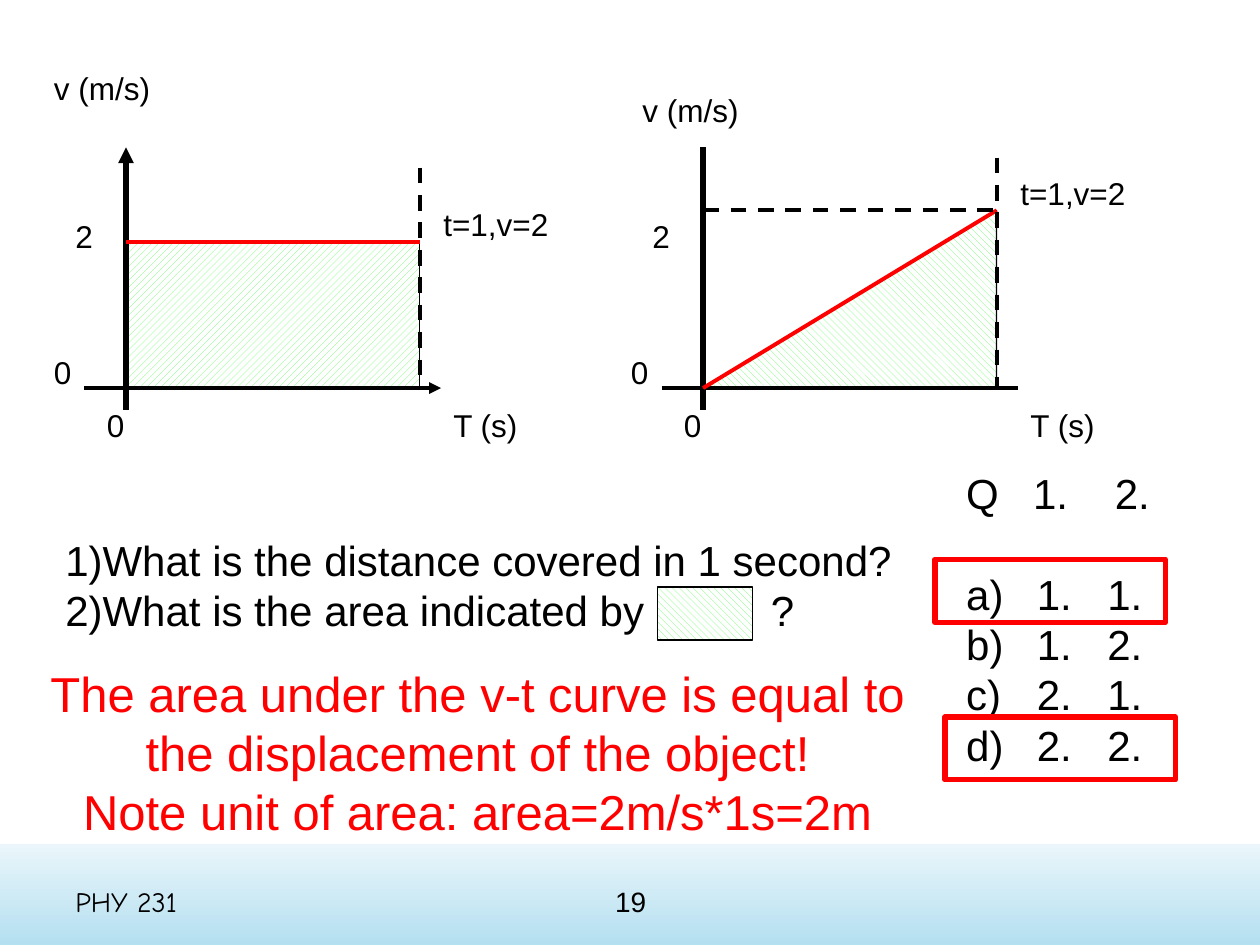
from dataclasses import dataclass

import pptx
import pptx.dml.color
import pptx.enum.dml
import pptx.enum.shapes
import pptx.enum.text
import pptx.oxml.ns
import pptx.util
from lxml import etree

Inches = pptx.util.Inches
Pt = pptx.util.Pt
RGB = pptx.dml.color.RGBColor
Align = pptx.enum.text.PP_ALIGN
Shape = pptx.enum.shapes.MSO_SHAPE
Pattern = pptx.enum.dml.MSO_PATTERN
qn = pptx.oxml.ns.qn

BLACK = RGB(0x00, 0x00, 0x00)
WHITE = RGB(0xFF, 0xFF, 0xFF)
RED = RGB(0xFF, 0x00, 0x00)
GREEN = RGB(0x66, 0xFF, 0x66)
BAND_DARK = RGB(0xB4, 0xDF, 0xF0)
BAND_LIGHT = RGB(0xEA, 0xF6, 0xFB)

AXIS_Y = 3.08
END_DX = 2.33  # horizontal distance from the origin to t = 1


@dataclass
class Graph:
    """One v-t graph; heights are slide positions in inches."""
    x: float
    start_y: float
    end_y: float
    limit_top: float
    point_label_y: float
    v_label_dx: float
    v_label_y: float
    arrows: bool


GRAPHS = [
    Graph(1, 1.92, 1.92, 1.33, 1.58, -0.67, 0.5, True),
    Graph(5.58, AXIS_Y, 1.67, 1.25, 1.33, -0.58, 0.67, False),
]


def add_text(slide, paragraphs: list[str], x: float, y: float, w: float, h: float,
             size: int = 18, color: RGB = BLACK, align: Align = Align.LEFT,
             font: str = "Arial", tabs: list[list[float]] | None = None,
             middle: bool = False):
    """Add a wrapped text box; tabs holds the tab stops of each paragraph."""
    tf = slide.shapes.add_textbox(Inches(x), Inches(y), Inches(w), Inches(h)).text_frame
    tf.word_wrap = True
    if middle:
        tf.vertical_anchor = pptx.enum.text.MSO_ANCHOR.MIDDLE
    for i, text in enumerate(paragraphs):
        p = tf.paragraphs[0] if i == 0 else tf.add_paragraph()
        p.text = text
        p.alignment = align
        if tabs and tabs[i]:
            tab_list = etree.SubElement(p._p.get_or_add_pPr(), qn("a:tabLst"))
            for stop in tabs[i]:
                etree.SubElement(tab_list, qn("a:tab"), pos=str(Inches(stop)), algn="l")
        p.font.name = font
        p.font.size = Pt(size)
        p.font.color.rgb = color
    return tf


def add_line(slide, x1: float, y1: float, x2: float, y2: float, width: float = 2.25,
             color: RGB = BLACK, dashed: bool = False, arrow: bool = False) -> None:
    """Add a line, with an optional arrowhead at its end."""
    c = slide.shapes.add_connector(pptx.enum.shapes.MSO_CONNECTOR.STRAIGHT,
                                   Inches(x1), Inches(y1), Inches(x2), Inches(y2))
    c.line.width = Pt(width)
    c.line.color.rgb = color
    if dashed:
        c.line.dash_style = pptx.enum.dml.MSO_LINE.DASH
    if arrow:
        etree.SubElement(c.line._get_or_add_ln(), qn("a:tailEnd"), type="triangle")
    etree.SubElement(c._element.spPr, qn("a:effectLst"))


def add_box(slide, kind: Shape, x: float, y: float, w: float, h: float,
            line: RGB = BLACK, width: float = 0.75, pattern: Pattern | None = None):
    """Add an outlined shape, hatched when a pattern is given."""
    sp = slide.shapes.add_shape(kind, Inches(x), Inches(y), Inches(w), Inches(h))
    sp.shadow.inherit = False
    sp.line.color.rgb = line
    sp.line.width = Pt(width)
    if pattern is None:
        sp.fill.background()
    else:
        sp.fill.patterned()
        sp.fill.pattern = pattern
        sp.fill.fore_color.rgb = GREEN
        sp.fill.back_color.rgb = WHITE
    return sp


def draw_area(slide, g: Graph) -> None:
    """Hatch the area under the velocity line."""
    h = AXIS_Y - g.end_y
    if g.start_y == g.end_y:
        add_box(slide, Shape.RECTANGLE, g.x, g.end_y, END_DX, h,
                pattern=Pattern.WIDE_UPWARD_DIAGONAL)
        return
    # The triangle is turned a quarter about its centre, so width and height swap.
    shift = (END_DX - h) / 2
    sp = add_box(slide, Shape.RIGHT_TRIANGLE, g.x + shift, g.end_y - shift, h, END_DX,
                 pattern=Pattern.WIDE_DOWNWARD_DIAGONAL)
    sp.rotation = 270


def draw_graph(slide, g: Graph) -> None:
    end_x = g.x + END_DX
    draw_area(slide, g)
    add_line(slide, g.x, 3.25, g.x, 1.17, width=3, arrow=g.arrows)
    add_line(slide, g.x - 0.33, AXIS_Y, g.x + 2.5, AXIS_Y, arrow=g.arrows)
    add_line(slide, g.x, g.start_y, end_x, g.end_y, color=RED)
    add_line(slide, end_x, g.limit_top, end_x, AXIS_Y, dashed=True)
    if g.start_y != g.end_y:
        add_line(slide, g.x, g.end_y, end_x, g.end_y, dashed=True)

    add_text(slide, ["T (s)"], g.x + 2.5, 3.17, 0.93, 0.5)
    add_text(slide, ["v (m/s)"], g.x + g.v_label_dx, g.v_label_y, 1.04, 0.9)
    add_text(slide, ["0"], g.x - 0.25, 3.17, 0.4, 0.5)
    add_text(slide, ["0"], g.x - 0.67, 2.75, 0.4, 0.5)
    add_text(slide, ["2"], g.x - 0.5, 1.67, 0.4, 0.5)
    add_text(slide, ["t=1,v=2"], g.x + 2.42, g.point_label_y, 1.42, 0.5)


def draw_footer(slide) -> None:
    band = slide.shapes.add_shape(Shape.RECTANGLE, 0, Inches(6.7), Inches(10), Inches(0.8))
    band.shadow.inherit = False
    band.line.fill.background()
    band.fill.gradient()
    band.fill.gradient_angle = 90
    for stop, color in zip(band.fill.gradient_stops, (BAND_DARK, BAND_LIGHT)):
        stop.color.rgb = color
    add_text(slide, ["PHY 231"], 0.5, 6.95, 2.33, 0.4, size=16, font="Comic Neue", middle=True)
    add_text(slide, ["19"], 3.42, 6.95, 3.17, 0.4, size=16, align=Align.CENTER, middle=True)


def draw_questions(slide) -> None:
    add_text(slide, ["1)What is the distance covered in 1 second?",
                     "2)What is the area indicated by\t?"],
             0.42, 4.19, 6.83, 0.91, size=24, tabs=[[], [5.6]])
    add_box(slide, Shape.RECTANGLE, 5.22, 4.66, 0.75, 0.42,
            pattern=Pattern.WIDE_DOWNWARD_DIAGONAL)

    answers = ["Q\t1.\t2.", "a)\t1.\t1.", "b)\t1.\t2.", "c)\t2.\t1.", "d)\t2.\t2."]
    tf = add_text(slide, answers, 7.57, 3.66, 1.68, 2.93, size=24,
                  tabs=[[0.53, 1.18]] + [[0.56, 1.12]] * 4)
    tf.paragraphs[1].space_before = Pt(28.8)
    for x, y in ((7.5, 5.69), (7.42, 4.44)):
        add_box(slide, Shape.RECTANGLE, x, y, 1.83, 0.5, line=RED, width=3)

    add_text(slide, ["The area under the v-t curve is equal to",
                     "the displacement of the object!\vNote unit of area: area=2m/s*1s=2m"],
             0.26, 5.22, 7.06, 1.51, size=28, color=RED, align=Align.CENTER)


def main() -> None:
    prs = pptx.Presentation()
    prs.slide_width, prs.slide_height = Inches(10), Inches(7.5)
    slide = prs.slides.add_slide(prs.slide_layouts[6])
    draw_footer(slide)
    for g in GRAPHS:
        draw_graph(slide, g)
    draw_questions(slide)
    prs.save("out.pptx")


if __name__ == "__main__":
    main()
